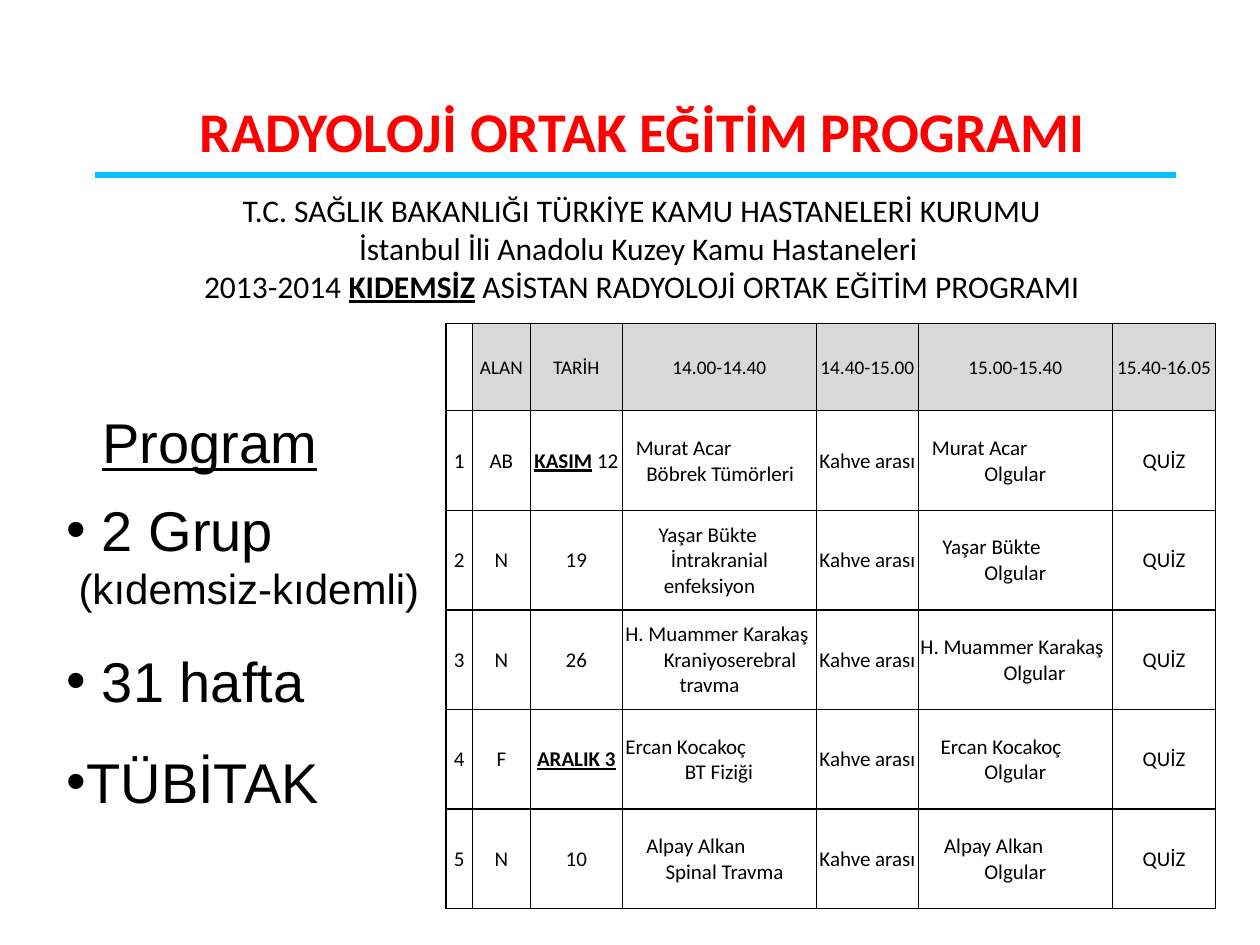
from lxml.etree import SubElement
from pptx import Presentation
from pptx.dml.color import RGBColor
from pptx.enum.shapes import MSO_CONNECTOR
from pptx.enum.text import MSO_ANCHOR, MSO_AUTO_SIZE, PP_ALIGN
from pptx.oxml.ns import qn
from pptx.util import Pt

COLORS = {"text": "000000", "title": "FF0000", "rule": "09BFFF", "header": "D8D8D8"}
COLUMN_WIDTHS = [15.1, 33.1, 52.6, 110.9, 58.3, 110.9, 59]
HEADER_HEIGHT, ROW_HEIGHT = 49.7, 56.9
HEADINGS = ["", "ALAN", "TARİH", "14.00-14.40", "14.40-15.00", "15.00-15.40", "15.40-16.05"]

# Area, date as (text, emphasised) runs, lecture lines, case lines.
# A line is (text, left margin, first-line indent).
SESSIONS = [
    ("AB", [("KASIM", True), (" 12", False)],
     [("Murat Acar", 7, 0), ("Böbrek Tümörleri", 13, 0)],
     [("Murat Acar", 7, 0), ("Olgular", 37, 0)]),
    ("N", [("19", False)],
     [("Yaşar Bükte", 20, 0), ("İntrakranial enfeksiyon", 23, 4)],
     [("Yaşar Bükte", 13, 0), ("Olgular", 37, 0)]),
    ("N", [("26", False)],
     [("H. Muammer Karakaş", 1, 0), ("Kraniyoserebral travma", 32, -9)],
     [("H. Muammer Karakaş", 0.5, 0), ("Olgular", 48, 0)]),
    ("F", [("ARALIK 3", True)],
     [("Ercan Kocakoç", 1, 0), ("BT Fiziği", 35, 0)],
     [("Ercan Kocakoç", 12, 0), ("Olgular", 37, 0)]),
    ("N", [("10", False)],
     [("Alpay Alkan", 13, 0), ("Spinal Travma", 24, 0)],
     [("Alpay Alkan", 14, 0), ("Olgular", 37, 0)]),
]


def color(name):
    return RGBColor.from_string(COLORS[name])


def place(shape, left, top, width, height):
    shape.left, shape.top, shape.width, shape.height = Pt(left), Pt(top), Pt(width), Pt(height)


def prepare_frame(shape, anchor=MSO_ANCHOR.TOP):
    frame = shape.text_frame
    frame.word_wrap = True
    frame.auto_size = MSO_AUTO_SIZE.NONE
    frame.vertical_anchor = anchor
    return frame


def add_run(paragraph, text, size, font="Calibri", fill="text", bold=False, underline=False):
    run = paragraph.add_run()
    run.text = text
    run.font.size = Pt(size)
    run.font.name = font
    run.font.bold = bold
    run.font.underline = underline
    run.font.color.rgb = color(fill)


def next_paragraph(frame, index):
    return frame.paragraphs[0] if index == 0 else frame.add_paragraph()


def set_indent(paragraph, margin, indent=0):
    properties = paragraph._p.get_or_add_pPr()
    properties.set("marL", str(int(Pt(margin))))
    properties.set("indent", str(int(Pt(indent))))
    return properties


def add_title(slide):
    title = slide.shapes.title
    place(title, 14.4, 15.1, 705.6, 181.4)
    frame = prepare_frame(title, MSO_ANCHOR.MIDDLE)
    frame.margin_bottom = Pt(67)
    paragraph = frame.paragraphs[0]
    paragraph.alignment = PP_ALIGN.CENTER
    add_run(paragraph, "RADYOLOJİ ORTAK EĞİTİM PROGRAMI", 32, fill="title", bold=True)


def add_rule(slide):
    rule = slide.shapes.add_connector(MSO_CONNECTOR.STRAIGHT, Pt(54), Pt(100), Pt(672), Pt(100))
    rule.line.color.rgb = color("rule")
    rule.line.width = Pt(3)
    SubElement(rule._element.spPr, qn("a:effectLst"))


def add_subtitle(slide):
    box = slide.shapes.add_textbox(Pt(36.7), Pt(105.8), Pt(660.2), Pt(72.7))
    frame = prepare_frame(box)
    lines = [
        [("T.C. SAĞLIK BAKANLIĞI TÜRKİYE KAMU HASTANELERİ KURUMU", False)],
        [("İstanbul İli Anadolu Kuzey Kamu Hastaneleri ", False)],
        [("2013-2014 ", False), ("KIDEMSİZ", True),
         (" ASİSTAN RADYOLOJİ ORTAK EĞİTİM PROGRAMI", False)],
    ]
    for index, runs in enumerate(lines):
        paragraph = next_paragraph(frame, index)
        paragraph.alignment = PP_ALIGN.CENTER
        for text, strong in runs:
            add_run(paragraph, text, 18, bold=strong, underline=strong)


def add_program_heading(slide):
    box = slide.shapes.add_textbox(Pt(42.5), Pt(210.2), Pt(164.2), Pt(58.3))
    paragraph = prepare_frame(box).paragraphs[0]
    paragraph.line_spacing = 1.5
    add_run(paragraph, " ", 32, "Arial")
    add_run(paragraph, "Program", 32, "Arial", underline=True)


def add_program_list(slide):
    body = slide.placeholders[1]
    place(body, 31, 279.4, 323.3, 230.4)
    frame = prepare_frame(body)
    items = [(" 2 Grup", 32, True, 1), (" (kıdemsiz-kıdemli)", 24, False, 1),
             (" 31 hafta", 32, True, 1.5), ("TÜBİTAK", 32, True, 1.5)]
    for index, (text, size, bulleted, spacing) in enumerate(items):
        paragraph = next_paragraph(frame, index)
        properties = set_indent(paragraph, 0)
        if bulleted:
            SubElement(properties, qn("a:buFont")).set("typeface", "Arial")
            SubElement(properties, qn("a:buChar")).set("char", "•")
        else:
            SubElement(properties, qn("a:buNone"))
        paragraph.line_spacing = spacing
        paragraph.space_before = Pt(0)
        add_run(paragraph, text, size, "Arial")


def format_cell(cell, fill=None):
    cell.vertical_anchor = MSO_ANCHOR.MIDDLE
    cell.margin_left = cell.margin_right = cell.margin_top = Pt(0.7)
    cell.margin_bottom = Pt(0)
    properties = cell._tc.get_or_add_tcPr()
    for side in ("lnL", "lnR", "lnT", "lnB"):
        border = SubElement(properties, qn(f"a:{side}"), w=str(int(Pt(1))))
        paint = SubElement(border, qn("a:solidFill"))
        SubElement(paint, qn("a:srgbClr"), val=COLORS["text"])
    if fill:
        cell.fill.solid()
        cell.fill.fore_color.rgb = color(fill)
    else:
        cell.fill.background()


def write_centred(cell, runs, size=12):
    paragraph = cell.text_frame.paragraphs[0]
    paragraph.alignment = PP_ALIGN.CENTER
    for text, strong in runs:
        add_run(paragraph, text, size, bold=strong, underline=strong)


def write_lines(cell, lines):
    for index, (text, margin, indent) in enumerate(lines):
        paragraph = next_paragraph(cell.text_frame, index)
        paragraph.alignment = PP_ALIGN.LEFT
        set_indent(paragraph, margin, indent)
        add_run(paragraph, text, 12)


def add_schedule(slide):
    row_count = len(SESSIONS) + 1
    height = HEADER_HEIGHT + ROW_HEIGHT * len(SESSIONS)
    table = slide.shapes.add_table(row_count, len(HEADINGS), Pt(254.9), Pt(185),
                                   Pt(sum(COLUMN_WIDTHS)), Pt(height)).table
    table.first_row = table.horz_banding = False
    for column, width in zip(table.columns, COLUMN_WIDTHS):
        column.width = Pt(width)
    for index, row in enumerate(table.rows):
        row.height = Pt(ROW_HEIGHT if index else HEADER_HEIGHT)

    # Header row, with a blank corner
    for cell, heading in zip(table.rows[0].cells, HEADINGS):
        format_cell(cell, "header" if heading else None)
        if heading:
            write_centred(cell, [(heading, False)], 11)

    # One row per session
    for number, (area, date, lecture, cases) in enumerate(SESSIONS, start=1):
        cells = list(table.rows[number].cells)
        for cell in cells:
            format_cell(cell)
        centred = {0: str(number), 1: area, 4: "Kahve arası", 6: "QUİZ"}
        for column, text in centred.items():
            write_centred(cells[column], [(text, False)])
        write_centred(cells[2], date)
        write_lines(cells[3], lecture)
        write_lines(cells[5], cases)


def main():
    presentation = Presentation()
    presentation.slide_width, presentation.slide_height = Pt(720), Pt(540)
    slide = presentation.slides.add_slide(presentation.slide_layouts[1])
    add_title(slide)
    add_rule(slide)
    add_subtitle(slide)
    add_schedule(slide)
    add_program_heading(slide)
    add_program_list(slide)
    presentation.save("out.pptx")


if __name__ == "__main__":
    main()
